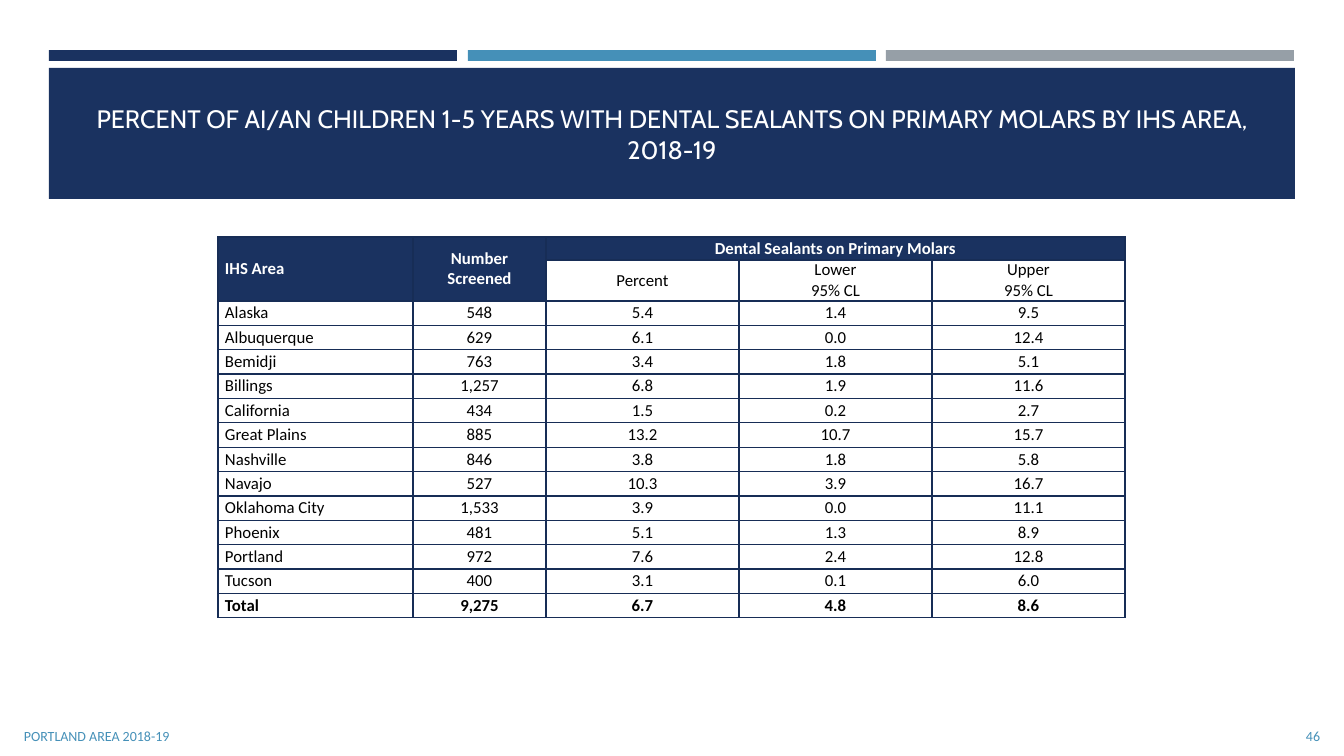
from lxml.etree import SubElement
from pptx import Presentation
from pptx.dml.color import RGBColor
from pptx.enum.shapes import MSO_SHAPE
from pptx.enum.text import MSO_ANCHOR, MSO_AUTO_SIZE, PP_ALIGN
from pptx.oxml.ns import qn
from pptx.util import Pt

SCALE = 9071  # EMU in one px
COLORS = {
    "navy": "1A3260",
    "blue": "4590B8",
    "gray": "969FA7",
    "border": "172D56",
    "white": "FFFFFF",
    "black": "000000",
}


def format_text(frame, font, size, color, align, bold=False):
    frame.vertical_anchor = MSO_ANCHOR.MIDDLE
    for para in frame.paragraphs:
        para.alignment = align
        for span in para.runs:
            span.font.name = font
            span.font.size = Pt(size)
            span.font.bold = bold
            span.font.color.rgb = RGBColor.from_string(COLORS[color])


def add_borders(cell, color, width):
    properties = cell._tc.get_or_add_tcPr()
    for index, side in enumerate(("lnL", "lnR", "lnT", "lnB")):
        line = SubElement(properties, qn(f"a:{side}"), w=str(Pt(width)))
        fill = SubElement(line, qn("a:solidFill"))
        SubElement(fill, qn("a:srgbClr"), val=COLORS[color])
        properties.insert(index, line)  # borders come before the cell fill


deck = Presentation()
deck.slide_width = 1344 * SCALE
deck.slide_height = 756 * SCALE
page = deck.slides.add_slide(deck.slide_layouts[5])

# Three accent bars and the title band
bars = [
    (49, 50, 408, 11, "navy"),
    (468, 50, 408, 11, "blue"),
    (886, 50, 408, 11, "gray"),
    (49, 68, 1246, 131, "navy"),
]
for left, top, width, height, color in bars:
    bar = page.shapes.add_shape(
        MSO_SHAPE.RECTANGLE, left * SCALE, top * SCALE, width * SCALE, height * SCALE
    )
    bar.shadow.inherit = False
    bar.fill.solid()
    bar.fill.fore_color.rgb = RGBColor.from_string(COLORS[color])
    bar.line.fill.background()

# Title, brought in front of its band
title = page.shapes.title
page.shapes.element.append(title.element)
title.left, title.top = 64 * SCALE, 78 * SCALE
title.width, title.height = 1216 * SCALE, 112 * SCALE
title.text_frame.text = (
    "PERCENT OF AI/AN CHILDREN 1-5 YEARS WITH DENTAL SEALANTS "
    "ON PRIMARY MOLARS BY IHS AREA, 2018-19"
)
title.text_frame.word_wrap = True
title.text_frame.auto_size = MSO_AUTO_SIZE.NONE
format_text(title.text_frame, "Cabin", 18, "white", PP_ALIGN.CENTER)

# Table of sealants by area
rows = [
    ("IHS Area", "Number Screened", "Dental Sealants on Primary Molars", "", ""),
    ("", "", "Percent", "Lower\n95% CL", "Upper\n95% CL"),
    ("Alaska", "548", "5.4", "1.4", "9.5"),
    ("Albuquerque", "629", "6.1", "0.0", "12.4"),
    ("Bemidji", "763", "3.4", "1.8", "5.1"),
    ("Billings", "1,257", "6.8", "1.9", "11.6"),
    ("California", "434", "1.5", "0.2", "2.7"),
    ("Great Plains", "885", "13.2", "10.7", "15.7"),
    ("Nashville", "846", "3.8", "1.8", "5.8"),
    ("Navajo", "527", "10.3", "3.9", "16.7"),
    ("Oklahoma City", "1,533", "3.9", "0.0", "11.1"),
    ("Phoenix", "481", "5.1", "1.3", "8.9"),
    ("Portland", "972", "7.6", "2.4", "12.8"),
    ("Tucson", "400", "3.1", "0.1", "6.0"),
    ("Total", "9,275", "6.7", "4.8", "8.6"),
]
column_widths = [195, 133, 193, 193, 193]
header_heights = [23, 41]
body_height = 317
body_count = len(rows) - len(header_heights)

table = page.shapes.add_table(
    len(rows), len(column_widths), 218 * SCALE, 237 * SCALE,
    sum(column_widths) * SCALE, (sum(header_heights) + body_height) * SCALE,
).table
table.first_row = False
table.horz_banding = False
for column, width in zip(table.columns, column_widths):
    column.width = width * SCALE
for index, row in enumerate(table.rows):
    if index < len(header_heights):
        row.height = header_heights[index] * SCALE
    else:
        row.height = body_height * SCALE // body_count

for row_index, values in enumerate(rows):
    for column_index, value in enumerate(values):
        cell = table.cell(row_index, column_index)
        is_header = row_index == 0 or (row_index == 1 and column_index < 2)
        is_total = row_index == len(rows) - 1
        cell.text_frame.text = value
        cell.margin_left = cell.margin_right = 7 * SCALE
        cell.margin_top = cell.margin_bottom = 0
        cell.vertical_anchor = MSO_ANCHOR.MIDDLE
        format_text(
            cell.text_frame, "Calibri", 12,
            "white" if is_header else "black",
            PP_ALIGN.LEFT if column_index == 0 else PP_ALIGN.CENTER,
            is_header or is_total,
        )
        if is_header:
            cell.fill.solid()
            cell.fill.fore_color.rgb = RGBColor.from_string(COLORS["navy"])
        else:
            cell.fill.background()
        add_borders(cell, "border", 1)

# Merged header cells
for first, last in [((0, 0), (1, 0)), ((0, 1), (1, 1)), ((0, 2), (0, 4))]:
    table.cell(*first).merge(table.cell(*last))

# Footer and page number
footers = [
    ("PORTLAND AREA 2018-19", 14, 762, PP_ALIGN.LEFT),
    ("46", 1214, 116, PP_ALIGN.RIGHT),
]
for text, left, width, align in footers:
    box = page.shapes.add_textbox(left * SCALE, 716 * SCALE, width * SCALE, 40 * SCALE)
    box.text_frame.word_wrap = True
    box.text_frame.text = text
    format_text(box.text_frame, "Calibri", 10, "blue", align)

deck.save("out.pptx")
